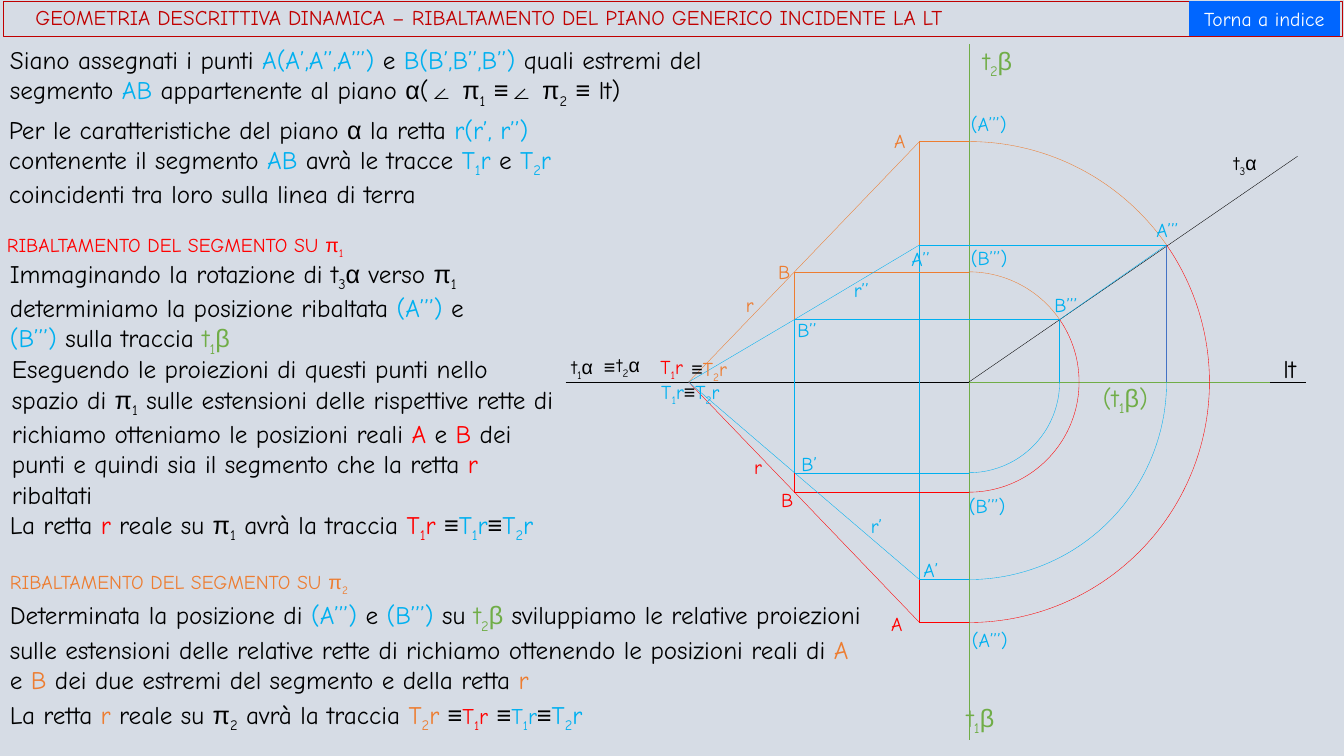
"""Build a descriptive-geometry slide: a plane through the ground line, turned onto both projection planes."""
from dataclasses import dataclass
from itertools import groupby
from math import atan2, degrees, hypot
from typing import Any, NamedTuple

from lxml import etree
from pptx import Presentation
from pptx import util as u
from pptx.dml.color import RGBColor
from pptx.enum import shapes, text
from pptx.oxml.ns import qn


@dataclass(frozen=True)
class Theme:
    colors = {"k": "000000", "c": "00B0F0", "r": "FF0000", "o": "ED7D31", "g": "70AD47",
              "d": "C00000", "b": "4472C4", "w": "FFFFFF", "button": "0066FF", "bg": "D6DCE5"}
    font = "Comic Neue"
    symbol_font = "Arial"
    title = 15
    body = 18
    small = 16
    label = 14
    hairline = 0.25


class TextItem(NamedTuple):
    left: float
    top: float
    width: float
    height: float
    size: int
    markup: str


class SpacePoint(NamedTuple):
    column: float
    depth: float
    height: float
    side_color: str


TH = Theme()
SUBSCRIPTS = {"₁": "1", "₂": "2", "₃": "3"}
SYMBOLS = "αβπ∠≡"
AXIS, GROUND, TRACE = 9.61, 3.79, 6.83
A = SpacePoint(9.12, 1.96, 1.36, "b")
B = SpacePoint(7.88, 0.9, 0.62, "c")

PARAGRAPHS = [
    TextItem(0, 0.39, 7.39, 0.71, TH.body,
             "kSiano assegnati i punti |cA(A’,A’’,A’’’) |ke |cB(B’,B’’,B’’) |kquali estremi del segmento "
             "|cAB |kappartenente al piano α(∠ π₁ ≡∠ π₂ ≡ lt)"),
    TextItem(-0.01, 1.08, 6.21, 1.01, TH.body,
             "kPer le caratteristiche del piano α la retta |cr(r’, r’’)|k contenente il segmento |cAB"
             "|k avrà le tracce |cT₁r|k e |cT₂r|k coincidenti tra loro sulla linea di terra"),
    TextItem(-0.03, 2.26, 4.57, 0.34, TH.label, "rRIBALTAMENTO DEL SEGMENTO SU π₁"),
    TextItem(0, 5.61, 4.57, 0.34, TH.label, "oRIBALTAMENTO DEL SEGMENTO SU π₂"),
    TextItem(0, 2.51, 5.17, 1.01, TH.body,
             "kImmaginando la rotazione di t₃α verso π₁ determiniamo la posizione ribaltata "
             "|c(A’’’) |ke |c(B’’’) |ksulla traccia |gt₁β"),
    TextItem(0.02, 3.46, 5.6, 1.62, TH.body,
             "kEseguendo le proiezioni di questi punti nello spazio di π₁ sulle estensioni delle "
             "rispettive rette di richiamo otteniamo le posizioni reali |rA|k e |rB"
             "|k dei punti e quindi sia il segmento che la retta |rr |kribaltati"),
    TextItem(0, 5, 6.11, 0.4, TH.body,
             "kLa retta |rr |kreale su π₁ avrà la traccia |rT₁r |k≡|cT₁r|k≡|cT₂r"),
    TextItem(0, 5.9, 8.66, 1.01, TH.body,
             "kDeterminata la posizione di |c(A’’’) |ke |c(B’’’) |ksu |gt₂β |ksviluppiamo le relative "
             "proiezioni sulle estensioni delle relative rette di richiamo ottenendo le posizioni "
             "reali di |oA|k e |oB|k dei due estremi del segmento e della retta |or"),
    TextItem(0, 6.89, 6.67, 0.4, TH.body,
             "kLa retta |or|k reale su π₂ avrà la traccia |oT₂r |k≡|RT₁r|k ≡|CT₁r|k≡|cT₂r"),
]

LABELS = [
    TextItem(left, top, width, 0.4 if size == TH.body else 0.34, size, markup)
    for left, top, width, size, markup in [
        (7.85, 4.43, 0.36, TH.label, "cB’"), (8.94, 2.4, 0.54, TH.label, "cA’’"),
        (9.65, 0.4, 0.7, TH.body, "gt₂β"), (9.49, 6.92, 0.7, TH.body, "gt₁β"),
        (11.37, 2.11, 0.54, TH.label, "cA’’’"), (8.74, 6.02, 0.54, TH.label, "rA"),
        (10.84, 3.74, 0.74, TH.body, "g(t₁β)"), (12.14, 1.45, 0.7, TH.label, "kt₃α"),
        (6.02, 3.45, 0.61, TH.label, "kt₂α"), (5.57, 3.47, 0.55, TH.label, "kt₁α"),
        (5.89, 3.47, 0.39, TH.label, "k≡"), (8.77, 1.23, 0.54, TH.label, "oA"),
        (9.06, 5.49, 0.38, TH.label, "cA’"), (7.81, 3.11, 0.54, TH.label, "cB’’"),
        (7.65, 4.79, 0.54, TH.label, "rB"), (7.62, 2.53, 0.54, TH.label, "oB"),
        (10.36, 2.86, 0.54, TH.label, "cB’’’"), (9.54, 6.18, 0.59, TH.label, "c(A’’’)"),
        (9.51, 4.85, 0.59, TH.label, "c(B’’’)"), (9.53, 1.06, 0.59, TH.label, "c(A’’’)"),
        (9.53, 2.39, 0.59, TH.label, "c(B’’’)"), (7.38, 4.46, 0.29, TH.label, "rr"),
        (8.54, 5.05, 0.33, TH.label, "cr’"), (8.37, 2.71, 0.42, TH.label, "cr’’"),
        (7.3, 2.86, 0.31, TH.label, "or"), (6.46, 3.72, 0.91, TH.label, "cT₁r|k≡|cT₂r"),
        (12.63, 3.46, 0.44, TH.body, "klt"), (6.76, 3.49, 0.64, TH.label, "k≡|oT₂r"),
        (6.45, 3.47, 0.59, TH.label, "rT₁r"),
    ]
]


def rgb(key: str) -> RGBColor:
    return RGBColor.from_string(TH.colors[key])


def apply(obj: Any, fmt: dict[str, Any]) -> None:
    for name, value in fmt.items():
        setattr(obj, name, value)


def box(left: float, top: float, width: float, height: float) -> list[int]:
    return [u.Inches(v) for v in (left, top, width, height)]


def write(p: Any, markup: str, size: int) -> None:
    for part in markup.split("|"):
        key = part[0]
        part_size = TH.small if key.isupper() else size
        for (sub, symbol), chars in groupby(part[1:], lambda ch: (ch in SUBSCRIPTS, ch in SYMBOLS)):
            r = p.add_run()
            r.text = "".join(SUBSCRIPTS.get(ch, ch) for ch in chars)
            apply(r.font, {"name": TH.symbol_font if symbol else TH.font, "size": u.Pt(part_size)})
            r.font.color.rgb = rgb(key.lower())
            if sub:
                r._r.get_or_add_rPr().set("baseline", "-25000")


def add_text(s: Any, item: TextItem) -> None:
    sp = s.shapes.add_textbox(*box(*item[:4]))
    tf = sp.text_frame
    apply(tf, {"word_wrap": item.width >= 0.5, "auto_size": text.MSO_AUTO_SIZE.SHAPE_TO_FIT_TEXT})
    write(tf.paragraphs[0], item.markup, item.size)


def add_line(s: Any, x1: float, y1: float, x2: float, y2: float, color: str,
             width: float = TH.hairline) -> None:
    cn = s.shapes.add_connector(shapes.MSO_CONNECTOR.STRAIGHT, *box(x1, y1, x2, y2))
    cn.line.color.rgb = rgb(color)
    cn.line.width = u.Pt(width)
    etree.SubElement(cn._element.spPr, qn("a:effectLst"))


def add_arc(s: Any, radius: float, start: float, end: float, color: str) -> None:
    sp = s.shapes.add_shape(shapes.MSO_SHAPE.ARC,
                            *box(AXIS - radius, GROUND - radius, 2 * radius, 2 * radius))
    sp.adjustments[0], sp.adjustments[1] = start * 0.6, end * 0.6
    sp.shadow.inherit = False
    sp.fill.background()
    sp.line.color.rgb = rgb(color)
    sp.line.width = u.Pt(TH.hairline)


def add_projections(s: Any, pt: SpacePoint) -> None:
    radius = hypot(pt.depth, pt.height)
    tilt = 360 - degrees(atan2(pt.height, pt.depth))
    side, high, low = AXIS + pt.depth, GROUND - pt.height, GROUND + pt.depth
    add_line(s, pt.column, high, pt.column, GROUND, "c")
    add_line(s, pt.column, GROUND, pt.column, low, "c")
    add_line(s, pt.column, high, AXIS, high, "c")
    add_line(s, AXIS, high, side, high, "c")
    add_line(s, side, high, side, GROUND, pt.side_color)
    add_line(s, AXIS, low, pt.column, low, "c")
    add_arc(s, pt.depth, 0, 90, "c")
    for color, start, end, near, far in [("r", tilt, 90, low, GROUND + radius),
                                         ("o", 270, tilt, high, GROUND - radius)]:
        add_arc(s, radius, start, end, color)
        add_line(s, AXIS, far, pt.column, far, color)
        add_line(s, pt.column, near, pt.column, far, color)


def add_header(s: Any) -> None:
    sp = s.shapes.title
    apply(sp, dict(zip(("left", "top", "width", "height"), box(0.03, 0.01, 13.28, 0.35))))
    sp.line.color.rgb = rgb("d")
    sp.line.width = u.Pt(TH.hairline)
    tf = sp.text_frame
    apply(tf, {"margin_left": u.Inches(0.32), "word_wrap": True, "auto_size": text.MSO_AUTO_SIZE.NONE,
               "vertical_anchor": text.MSO_ANCHOR.MIDDLE})
    apply(tf.paragraphs[0], {"alignment": text.PP_ALIGN.LEFT, "line_spacing": 0.9})
    write(tf.paragraphs[0],
          "dGEOMETRIA DESCRITTIVA DINAMICA – RIBALTAMENTO DEL PIANO GENERICO INCIDENTE LA LT", TH.title)
    sp = s.shapes.add_shape(shapes.MSO_SHAPE.ACTION_BUTTON_CUSTOM, *box(11.79, 0.01, 1.5, 0.35))
    sp.shadow.inherit = False
    sp.fill.solid()
    sp.fill.fore_color.rgb = rgb("button")
    sp.line.fill.background()
    tf = sp.text_frame
    tf.vertical_anchor = text.MSO_ANCHOR.MIDDLE
    tf.paragraphs[0].alignment = text.PP_ALIGN.CENTER
    write(tf.paragraphs[0], "wTorna a indice", TH.label)


def main() -> None:
    prs = Presentation()
    apply(prs, {"slide_width": u.Inches(13.33), "slide_height": u.Inches(7.5)})
    s = prs.slides.add_slide(prs.slide_layouts[5])
    s.background.fill.solid()
    s.background.fill.fore_color.rgb = rgb("bg")
    add_header(s)
    add_line(s, 5.61, GROUND, 12.95, GROUND, "k")
    add_line(s, AXIS, 0.44, AXIS, 7.34, "g")
    add_line(s, AXIS, GROUND, 12.87, 1.55, "k")
    add_line(s, AXIS, GROUND, 12.6, GROUND, "g", 0.5)
    for pt in (A, B):
        add_projections(s, pt)
    for color, a, b in [("r", hypot(*A[1:3]), hypot(*B[1:3])), ("c", A.depth, B.depth),
                        ("c", -A.height, -B.height), ("o", -hypot(*A[1:3]), -hypot(*B[1:3]))]:
        add_line(s, TRACE, GROUND, B.column, GROUND + b, color)
        add_line(s, B.column, GROUND + b, A.column, GROUND + a, color)
    add_line(s, AXIS + B.depth, GROUND - B.height, AXIS + A.depth, GROUND - A.height, "c")
    for item in PARAGRAPHS + LABELS:
        add_text(s, item)
    prs.save("out.pptx")


if __name__ == "__main__":
    main()
